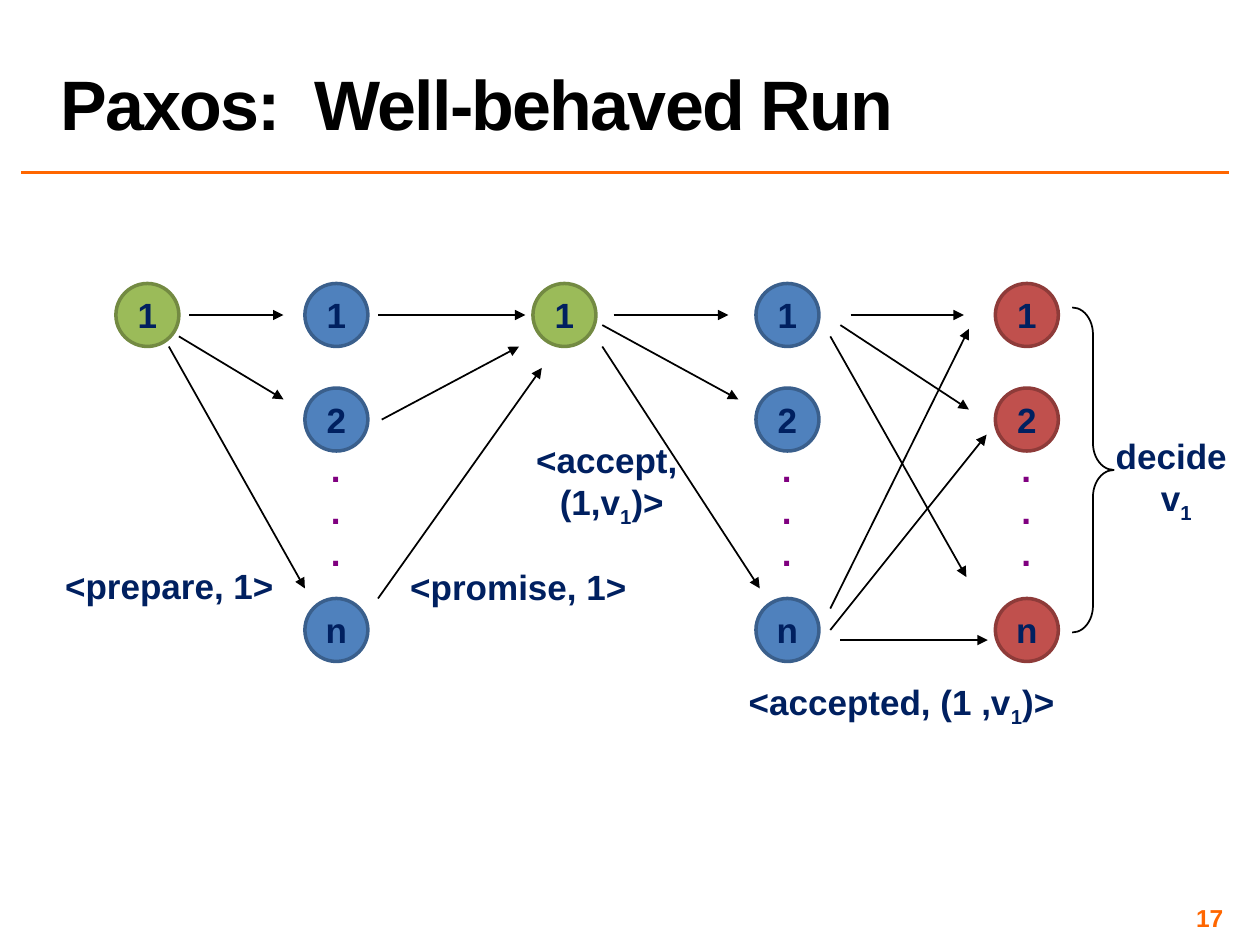
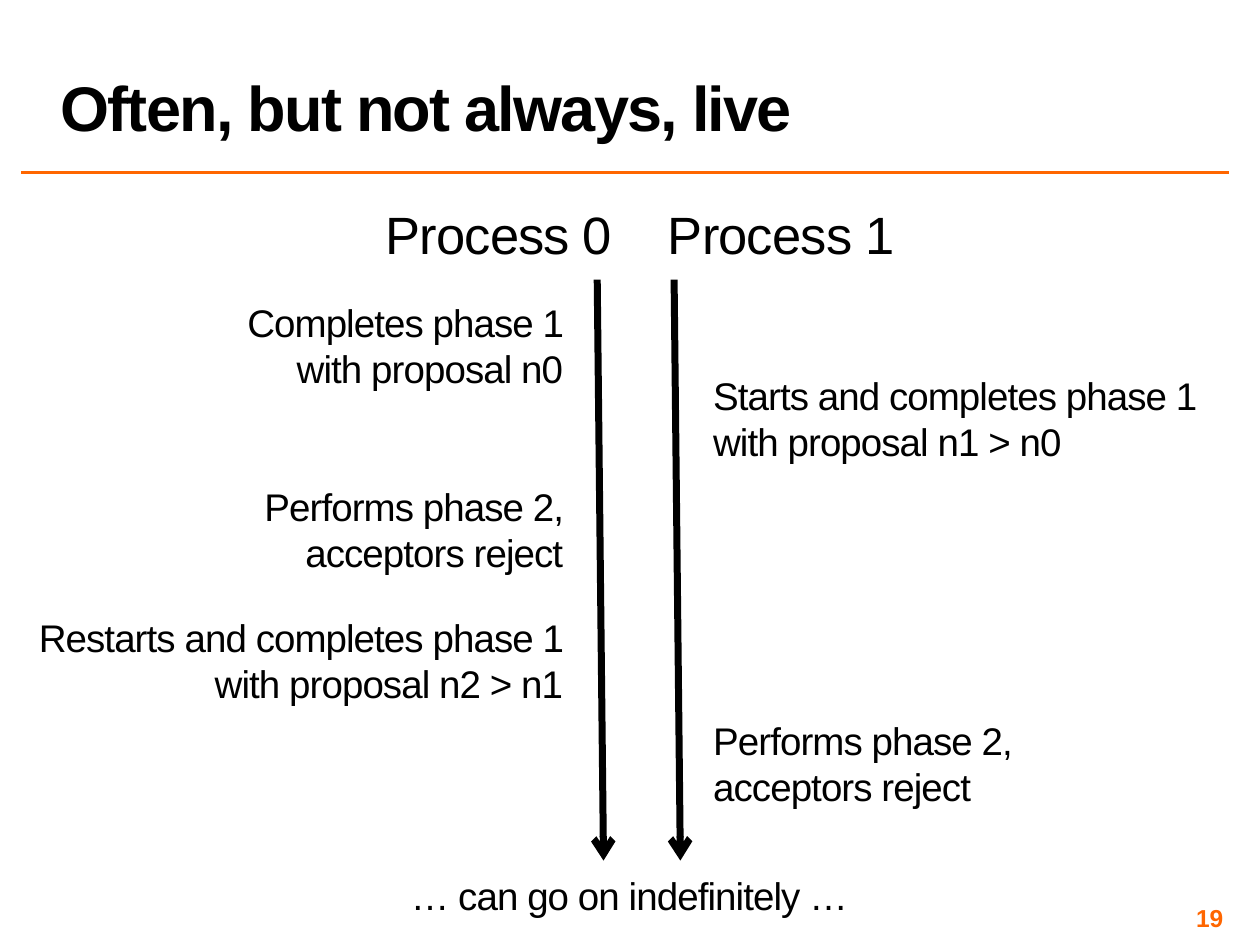
from dataclasses import dataclass

from lxml import etree
from pptx import Presentation
from pptx import util as u
from pptx.dml.color import RGBColor
from pptx.enum import shapes, text
from pptx.oxml import ns

LEFT, MID, RIGHT = text.PP_ALIGN.LEFT, text.PP_ALIGN.CENTER, text.PP_ALIGN.RIGHT
TOP, MIDDLE, BASE = (text.MSO_ANCHOR.TOP, text.MSO_ANCHOR.MIDDLE,
                     text.MSO_ANCHOR.BOTTOM)


@dataclass(frozen=True)
class Theme:
    font: str = "Arial"
    ink: str = "000000"
    accent: str = "FF6600"
    navy: str = "002060"
    dots: str = "800080"
    green: tuple = ("9BBB59", "738A42")
    blue: tuple = ("4F81BD", "3A5F8C")
    red: tuple = ("C0504D", "8E3B39")
    head: int = 30
    body: int = 22
    label: int = 20
    foot: int = 14


T = Theme()
NODE = 0.5
ROWS = {"1": 0, "2": 0.83, "n": 2.5}


def rgb(code):
    return RGBColor.from_string(code)


def place(box, *part):
    """Turn a part's place within a box into lengths on the slide."""
    x, y, *size = part
    return [u.Inches(v) for v in (box[0] + x, box[1] + y, *size)]


def write(shape, words, size=T.label, color=T.navy, bold=True, align=MID,
          anchor=TOP, wrap=False, pad=(0.1, 0.05), track=0, lead=None):
    """Fill a shape with text; a newline starts a paragraph, ~ marks subscript."""
    frame = shape.text_frame
    frame.word_wrap, frame.vertical_anchor = wrap, anchor
    frame.margin_left = frame.margin_right = u.Inches(pad[0])
    frame.margin_top = frame.margin_bottom = u.Inches(pad[1])
    for i, line in enumerate(words.split("\n")):
        para = frame.add_paragraph() if i else frame.paragraphs[0]
        para.alignment = align
        if lead:
            para.line_spacing = lead
        for j, piece in enumerate(line.split("~")):
            if not piece:
                continue
            run = para.add_run()
            run.text = piece
            font = run.font
            font.name, font.size, font.bold = T.font, u.Pt(size), bold
            font.color.rgb = rgb(color)
            props = run._r.get_or_add_rPr()
            if track:
                props.set("spc", str(int(track * 100)))
            if j % 2:
                props.set("baseline", "-25000")


def label(slide, box, part, words, **style):
    write(slide.shapes.add_textbox(*place(box, *part)), words, **style)


def line(slide, box, start, end, color=T.ink, width=1, tip=None):
    link = slide.shapes.add_connector(
        shapes.MSO_CONNECTOR.STRAIGHT, *place(box, *start), *place(box, *end))
    link.line.color.rgb, link.line.width = rgb(color), u.Pt(width)
    if tip:
        etree.SubElement(link.line._get_or_add_ln(),
                         ns.qn("a:tailEnd"), type=tip)
    etree.SubElement(link._element.spPr, ns.qn("a:effectLst"))


def frame(deck, title, size, number, width=9.37):
    """Add a slide with the shared title, rule and number."""
    slide = deck.slides.add_slide(deck.slide_layouts[6])
    page = (0, 0)
    line(slide, page, (0.17, 1.37), (9.75, 1.37), color=T.accent, width=2)
    label(slide, page, (0.38, 0.02, width, 1.17), title, size=size, color=T.ink,
          align=LEFT, anchor=BASE, wrap=True, track=-1, lead=0.8)
    label(slide, page, (7.42, 7.17, 2.33, 0.23), str(number), size=T.foot,
          color=T.accent, align=RIGHT, anchor=MIDDLE, wrap=True,
          pad=(0.04, 0.04))
    return slide


def column(slide, box, x, tint, names):
    for name in names:
        node = slide.shapes.add_shape(
            shapes.MSO_SHAPE.OVAL, *place(box, x, ROWS[name], NODE, NODE))
        node.shadow.inherit = False
        node.fill.solid()
        node.fill.fore_color.rgb = rgb(tint[0])
        node.line.color.rgb, node.line.width = rgb(tint[1]), u.Pt(2)
        write(node, name, anchor=MIDDLE)
    if "n" in names:
        label(slide, box, (x + 0.08, 1.25, 0.33, 1.1), ".\n.\n.",
              color=T.dots, wrap=True)


def verdict(slide, box):
    brace = slide.shapes.add_shape(
        shapes.MSO_SHAPE.RIGHT_BRACE, *place(box, 0, 0, 0.33, 2.58))
    brace.shadow.inherit = False
    brace.fill.background()
    brace.line.color.rgb, brace.line.width = rgb(T.ink), u.Pt(1)
    brace.adjustments[0], brace.adjustments[1] = 0.646, 0.5
    label(slide, box, (0.04, 0.96, 1.57, 0.77), "decide \nv~1~", wrap=True)


def flow(slide, box):
    """Draw the message rounds, their arrows and the decision."""
    arrows = [
        # prepare
        ((0.58, 0.25), (1.33, 0.25)),
        ((0.5, 0.42), (1.33, 0.92)),
        ((0.42, 0.5), (1.5, 2.42)),
        # promise
        ((2.08, 0.25), (3.25, 0.25)),
        ((2.11, 1.08), (3.2, 0.5)),
        ((2.08, 2.5), (3.38, 0.67)),
        # accept
        ((3.95, 0.25), (4.86, 0.25)),
        ((3.86, 0.33), (4.94, 0.92)),
        ((3.86, 0.5), (5.11, 2.42)),
        # accepted
        ((5.83, 0.25), (6.73, 0.25)),
        ((5.75, 0.33), (6.77, 1)),
        ((5.67, 0.42), (6.75, 2.33)),
        ((5.67, 2.58), (6.77, 0.36)),
        ((5.67, 2.75), (6.91, 1.2)),
        ((5.75, 2.83), (6.92, 2.83)),
    ]
    for start, end in arrows:
        line(slide, box, start, end, tip="triangle")
    for x, tint, names in [(0, T.green, "1"), (1.5, T.blue, "12n"),
                           (3.31, T.green, "1"), (5.08, T.blue, "12n"),
                           (6.98, T.red, "12n")]:
        column(slide, box, x, tint, names)
    for part, words in [
            ((-0.51, 2.18, 1.87, 0.44), "<prepare, 1>"),
            ((2.23, 2.19, 1.93, 0.44), "<promise, 1>"),
            ((3.23, 1.18, 1.41, 0.77), "<accept, \n(1,v~1~)>"),
            ((4.91, 3.1, 2.65, 0.44), "<accepted, (1 ,v~1~)>")]:
        label(slide, box, part, words)
    verdict(slide, (box[0] + 7.59, box[1] + 0.19))


def note(slide, box, part, words, size=T.body, align=MID):
    label(slide, box, part, words, size=size, color=T.ink, bold=False,
          align=align, wrap=True, pad=(0.04, 0.04), track=-0.5)


def lane(slide, box, name, events, right=False):
    """Draw a process's time line with its events on the outer side."""
    wide, tall = box[2:]
    axis = 0 if right else wide
    head = axis - (0.57 if right else 2.2)
    note(slide, box, (head, 0, 2.84, 0.64), name, size=T.head)
    line(slide, box, (axis, 0.66), (axis + 0.05, tall), width=4, tip="arrow")
    for y, width, height, words in events:
        x = axis + 0.27 if right else axis - 0.23 - width
        note(slide, box, (x, y, width, height), words,
             align=LEFT if right else RIGHT)


def main():
    deck = Presentation()
    deck.slide_width, deck.slide_height = u.Inches(10), u.Inches(7.5)

    run = frame(deck, "Paxos:  Well-behaved Run", 40, 17)
    flow(run, (0.92, 2.25))

    live = frame(deck, "Often, but not always, live", 36, 19, width=9.62)
    reject = "Performs phase 2, acceptors reject"
    lane(live, (0.24, 1.56, 4.5, 5.27), "Process 0", [
        (0.77, 2.84, 1.32, "Completes phase 1 with proposal n0"),
        (2.23, 2.97, 0.93, reject),
        (3.27, 4.27, 1.03,
         "Restarts and completes phase 1 with proposal n2 > n1")])
    lane(live, (5.35, 1.56, 4.23, 5.27), "Process 1", [
        (1.35, 3.96, 1.3,
         "Starts and completes phase 1 with proposal n1 > n0"),
        (4.09, 3.38, 0.94, reject)], right=True)
    note(live, (0, 0), (2.85, 6.88, 4.29, 0.45), "… can go on indefinitely …")

    deck.save("out.pptx")


if __name__ == "__main__":
    main()
